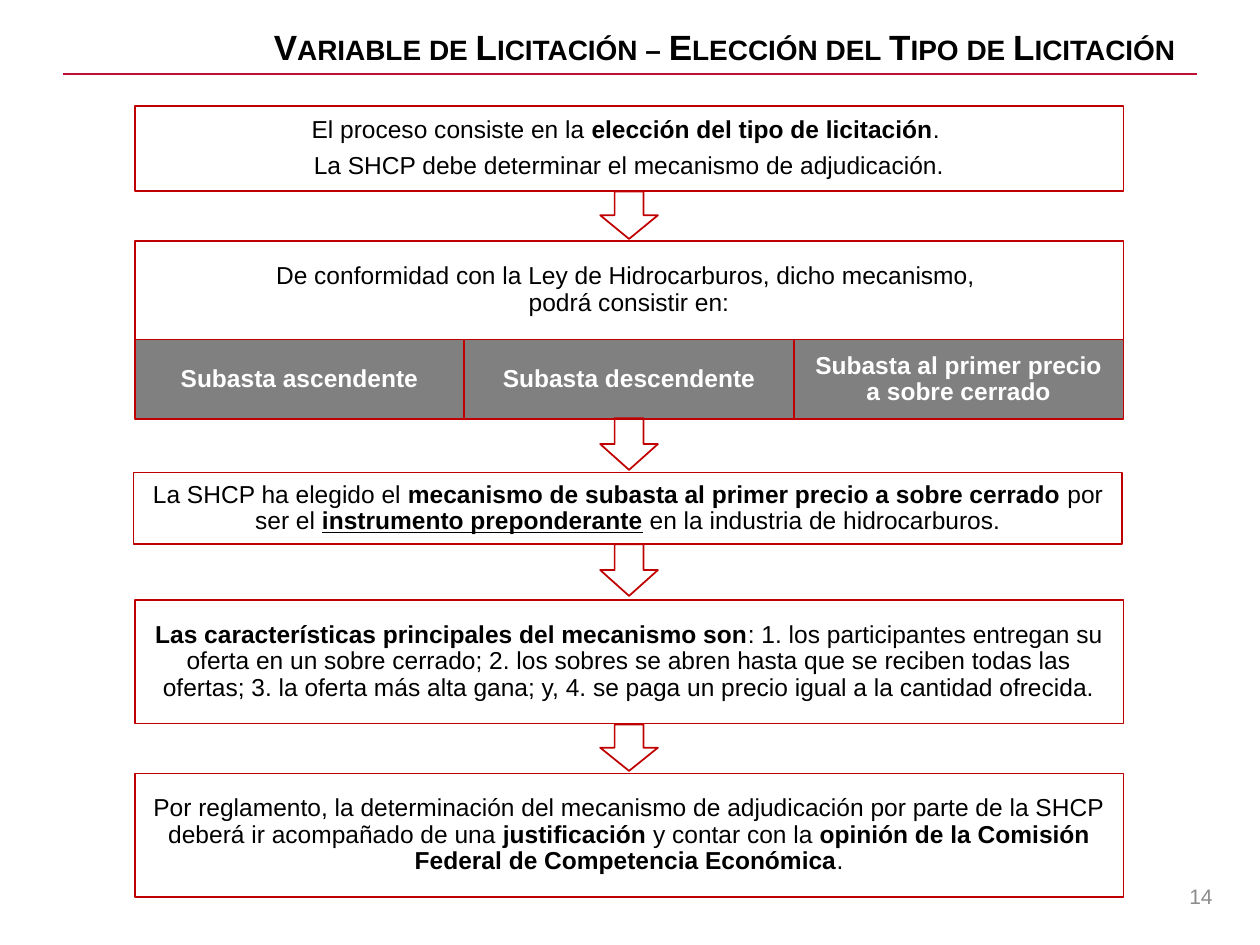
import pptx
import pptx.util
import pptx.dml.color
import pptx.enum.shapes
import pptx.enum.text
from dataclasses import dataclass

Pt = pptx.util.Pt
Shape = pptx.enum.shapes.MSO_SHAPE
Align = pptx.enum.text.PP_ALIGN
Middle = pptx.enum.text.MSO_ANCHOR.MIDDLE


@dataclass(frozen=True)
class Theme:
    font: str = "Arial"
    black: str = "000000"
    white: str = "FFFFFF"
    gray: str = "808080"
    number: str = "8C8C8C"
    red: str = "C00000"
    rule: str = "BE0F34"
    title_size: float = 20
    body_size: float = 14
    number_size: float = 12


THEME = Theme()
BOLD, UNDERLINED = "bold", "underlined"

LEFT, WIDTH = 77, 565
INTRO = [
    [("El proceso consiste en la ", ""), ("elección del tipo de licitación", BOLD), (". ", "")],
    [("La SHCP debe determinar el mecanismo de adjudicación.", "")],
]
OPTIONS_LEAD = [[("De conformidad con la Ley de Hidrocarburos, dicho mecanismo, \npodrá consistir en:", "")]]
OPTIONS = ["Subasta ascendente", "Subasta descendente", "Subasta al primer precio a sobre cerrado"]
CHOICE = [[
    ("La SHCP ha elegido el ", ""),
    ("mecanismo de subasta al primer precio a sobre cerrado ", BOLD),
    ("por ser el ", ""),
    ("instrumento preponderante", UNDERLINED),
    (" en la industria de hidrocarburos.", ""),
]]
FEATURES = [[
    ("Las características principales del mecanismo son", BOLD),
    (": 1. los participantes entregan su oferta en un sobre cerrado; 2. los sobres se abren "
     "hasta que se reciben todas las ofertas; 3. la oferta más alta gana; y, 4. se paga un "
     "precio igual a la cantidad ofrecida.", ""),
]]
RULING = [[
    ("Por reglamento, la determinación del mecanismo de adjudicación por parte de la SHCP "
     "deberá ir acompañado de una ", ""),
    ("justificación ", BOLD),
    ("y contar con la ", ""),
    ("opinión de la Comisión Federal de Competencia Económica", BOLD),
    (".", ""),
]]


def rgb(value):
    return pptx.dml.color.RGBColor.from_string(value)


def style_span(span, size, color, bold=False):
    span.font.name = THEME.font
    span.font.size = Pt(size)
    span.font.bold = bold
    span.font.color.rgb = rgb(color)


def add_outlined(page, kind, box, fill=None):
    shape = page.shapes.add_shape(kind, *map(Pt, box))
    shape.shadow.inherit = False
    if fill:
        shape.fill.solid()
        shape.fill.fore_color.rgb = rgb(fill)
    else:
        shape.fill.background()
    shape.line.color.rgb = rgb(THEME.red)
    shape.line.width = Pt(1)
    return shape


def add_panel(page, box, paragraphs, fill=None, color=THEME.black):
    frame = add_outlined(page, Shape.RECTANGLE, box, fill).text_frame
    frame.word_wrap = True
    frame.vertical_anchor = Middle
    for index, spans in enumerate(paragraphs):
        para = frame.add_paragraph() if index else frame.paragraphs[0]
        para.alignment = Align.CENTER
        para.line_spacing = 0.9
        para.space_after = Pt(5.5)
        for text, emphasis in spans:
            for number, line in enumerate(text.split("\n")):
                if number:
                    para.add_line_break()
                span = para.add_run()
                span.text = line
                style_span(span, THEME.body_size, color, bool(emphasis))
                span.font.underline = emphasis == UNDERLINED


def add_options(page, box):
    """Lead sentence above a row of equal cells."""
    left, top, width, height = box
    lead = 56.5
    add_panel(page, (left, top, width, lead), OPTIONS_LEAD)
    cell = width / len(OPTIONS)
    for column, label in enumerate(OPTIONS):
        add_panel(page, (left + column * cell, top + lead, cell, height - lead),
                  [[(label, BOLD)]], THEME.gray, THEME.white)


def add_arrow(page, top, height):
    width = 33
    add_outlined(page, Shape.DOWN_ARROW, (LEFT + (WIDTH - width) / 2, top, width, height))


def add_heading(page, box):
    left, top, width, height = box
    title = page.shapes.title
    title.left, title.top, title.width, title.height = map(Pt, box)
    frame = title.text_frame
    frame.text = "Variable de Licitación – Elección del Tipo de Licitación"
    frame.auto_size = pptx.enum.text.MSO_AUTO_SIZE.NONE
    frame.vertical_anchor = Middle
    frame.margin_right = Pt(12.5)
    para = frame.paragraphs[0]
    para.alignment = Align.RIGHT
    span = para.runs[0]
    style_span(span, THEME.title_size, THEME.black, True)
    span.font._element.set("cap", "small")

    # Rule under the title
    bottom = top + height
    rule = page.shapes.add_connector(pptx.enum.shapes.MSO_CONNECTOR.STRAIGHT,
                                     *map(Pt, (left, bottom, left + width, bottom)))
    rule.line.color.rgb = rgb(THEME.rule)
    rule.line.width = Pt(1)
    effects = pptx.oxml.parse_xml(
        '<a:effectLst xmlns:a="http://schemas.openxmlformats.org/drawingml/2006/main"/>')
    rule._element.spPr.append(effects)


def add_page_number(page, box):
    frame = page.shapes.add_textbox(*map(Pt, box)).text_frame
    frame.word_wrap = True
    frame.vertical_anchor = Middle
    frame.text = "14"
    para = frame.paragraphs[0]
    para.alignment = Align.RIGHT
    style_span(para.runs[0], THEME.number_size, THEME.number)


def main():
    deck = pptx.Presentation()
    deck.slide_width, deck.slide_height = Pt(720), Pt(540)
    page = deck.slides.add_slide(deck.slide_layouts[5])  # Title Only

    add_heading(page, (36, 10.8, 648, 31.5))

    # Steps of the process, from top to bottom
    add_panel(page, (LEFT, 60.5, WIDTH, 48.5), INTRO)
    add_options(page, (LEFT, 137.5, WIDTH, 102))
    add_panel(page, (LEFT - 0.7, 270, WIDTH, 41), CHOICE)
    add_panel(page, (LEFT, 343, WIDTH, 70.5), FEATURES)
    add_panel(page, (LEFT, 442, WIDTH, 70.5), RULING)

    # Arrows between the steps
    for top, height in ((109.5, 27), (239, 29.5), (311, 29.5), (414, 26.5)):
        add_arrow(page, top, height)

    add_page_number(page, (532, 497.5, 168, 29))
    deck.save("out.pptx")


if __name__ == "__main__":
    main()
